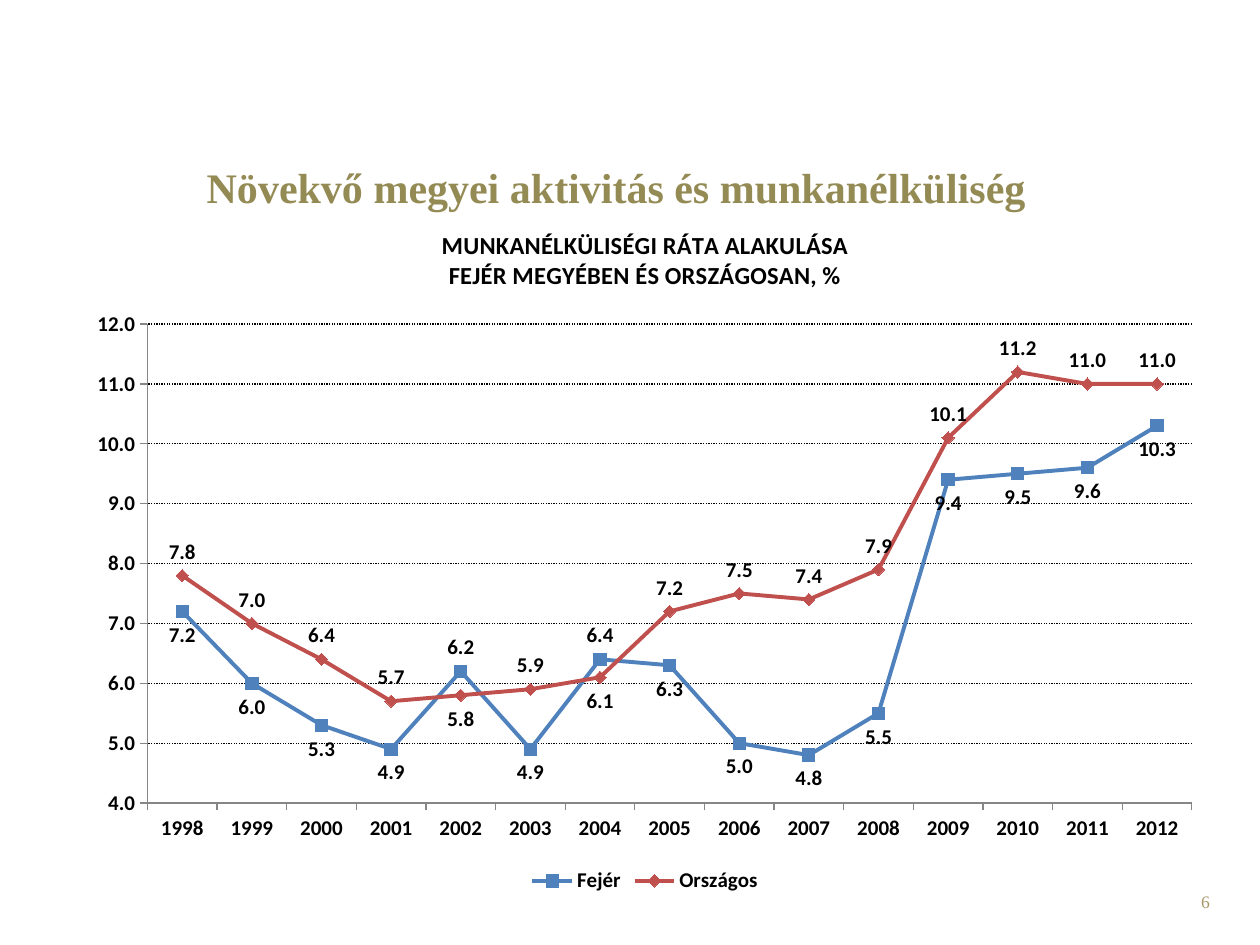
from dataclasses import dataclass
from lxml import etree
from pptx import Presentation
from pptx.chart.data import CategoryChartData
from pptx.dml.color import RGBColor
from pptx.enum import chart as ch, dml, text
from pptx.oxml import ns
from pptx.util import Pt


@dataclass(frozen=True)
class Theme:
    """Colours, fonts and type sizes."""
    olive: str = "948A54"
    tan: str = "A69765"
    ink: str = "000000"
    axis: str = "868686"
    blue: str = "4F81BD"
    red: str = "C0504D"
    serif: str = "Times New Roman"
    sans: str = "Calibri"
    head: int = 24
    title: int = 14
    body: int = 12
    foot: int = 10


T = Theme()
YEARS = [str(y) for y in range(1998, 2013)]
POS, MARK = ch.XL_LABEL_POSITION, ch.XL_MARKER_STYLE
FEJER = (7.2, 6.0, 5.3, 4.9, 6.2, 4.9, 6.4, 6.3, 5.0, 4.8, 5.5, 9.4, 9.5, 9.6, 10.3)
ORSZ = (7.8, 7.0, 6.4, 5.7, 5.8, 5.9, 6.1, 7.2, 7.5, 7.4, 7.9, 10.1, 11.2, 11.0, 11.0)
RATES = (
    ("Fejér", FEJER, T.blue, MARK.SQUARE, POS.BELOW, POS.ABOVE),
    ("Országos", ORSZ, T.red, MARK.DIAMOND, POS.ABOVE, POS.BELOW),
)
SWAPPED = (4, 6)


def put(obj, **fmt):
    """Set each format value on an object."""
    for key, val in fmt.items():
        setattr(obj, key, val)


def style(font, name, size, color, bold=False):
    """Format a font."""
    put(font, name=name, size=Pt(size), bold=bold)
    font.color.rgb = RGBColor.from_string(color)


def stroke(line, color, width, **fmt):
    """Format a line."""
    put(line, width=Pt(width), **fmt)
    line.color.rgb = RGBColor.from_string(color)


def place(shape, box):
    """Move a shape to a box."""
    put(shape, **dict(zip(("left", "top", "width", "height"), map(Pt, box))))


def heading(slide, box):
    """Fill the title placeholder."""
    shape = slide.shapes.title
    place(shape, box)
    frame = shape.text_frame
    frame.text = "Növekvő megyei aktivitás és munkanélküliség"
    put(frame, word_wrap=False, vertical_anchor=text.MSO_ANCHOR.TOP,
        auto_size=text.MSO_AUTO_SIZE.NONE)
    para = frame.paragraphs[0]
    para.alignment = text.PP_ALIGN.LEFT
    style(para.runs[0].font, T.serif, T.head, T.olive, True)


def number(slide, box):
    """Add the page number."""
    frame = slide.shapes.add_textbox(*map(Pt, box)).text_frame
    put(frame, word_wrap=True, text="6")
    para = frame.paragraphs[0]
    para.alignment = text.PP_ALIGN.RIGHT
    style(para.runs[0].font, T.serif, T.foot, T.tan)


def layout(chart, **frac):
    """Fix the inner plot area as fractions of the chart."""
    plot = chart._chartSpace.find(".//" + ns.qn("c:plotArea"))
    for old in plot.findall(ns.qn("c:layout")):
        plot.remove(old)
    root = etree.Element(ns.qn("c:layout"))
    man = etree.SubElement(root, ns.qn("c:manualLayout"))
    vals = dict(layoutTarget="inner", xMode="edge", yMode="edge", **frac)
    for key, val in vals.items():
        etree.SubElement(man, ns.qn("c:" + key)).set("val", str(val))
    plot.insert(0, root)


def axes(chart):
    """Format both axes and the grid."""
    for axis in (chart.category_axis, chart.value_axis):
        put(axis, major_tick_mark=ch.XL_TICK_MARK.OUTSIDE,
            minor_tick_mark=ch.XL_TICK_MARK.NONE)
        stroke(axis.format.line, T.axis, 0.75)
        style(axis.tick_labels.font, T.sans, T.body, T.ink, True)
    axis = chart.value_axis
    put(axis, minimum_scale=4, maximum_scale=12, major_unit=1,
        has_major_gridlines=True)
    put(axis.tick_labels, number_format="#,##0.0", number_format_is_linked=False)
    stroke(axis.major_gridlines.format.line, T.ink, 0.75,
           dash_style=dml.MSO_LINE.ROUND_DOT)


def curve(line, color, mark, side, other):
    """Format one series and its labels."""
    line.smooth = False
    stroke(line.format.line, color, 2.25)
    put(line.marker, style=mark, size=7)
    line.marker.format.fill.solid()
    line.marker.format.fill.fore_color.rgb = RGBColor.from_string(color)
    stroke(line.marker.format.line, color, 0.75)
    tags = line.data_labels
    put(tags, show_value=True, position=side, number_format="0.0",
        number_format_is_linked=False)
    style(tags.font, T.sans, T.body, T.ink, True)
    for i in SWAPPED:
        tag = line.points[i].data_label
        style(tag.font, T.sans, T.body, T.ink, True)
        tag.position = other


def rates(slide, box):
    """Add the line chart of unemployment rates."""
    data = CategoryChartData(number_format="0.0")
    data.categories = YEARS
    for name, vals, *_ in RATES:
        data.add_series(name, vals)
    kind = ch.XL_CHART_TYPE.LINE_MARKERS
    chart = slide.shapes.add_chart(kind, *map(Pt, box), data).chart
    style(chart.font, T.sans, T.body, T.ink, True)
    put(chart, has_title=True, has_legend=True)
    chart.plots[0].vary_by_categories = False
    frame = chart.chart_title.text_frame
    frame.text = "MUNKANÉLKÜLISÉGI RÁTA ALAKULÁSA\nFEJÉR MEGYÉBEN ÉS ORSZÁGOSAN, %"
    for para in frame.paragraphs:
        style(para.runs[0].font, T.sans, T.title, T.ink, True)
    chart.chart_title.include_in_layout = False
    put(chart.legend, position=ch.XL_LEGEND_POSITION.BOTTOM, include_in_layout=False)
    style(chart.legend.font, T.sans, T.body, T.ink, True)
    layout(chart, x=0.064, y=0.173, w=0.915, h=0.69)
    axes(chart)
    for line, (_, _, *look) in zip(chart.plots[0].series, RATES):
        curve(line, *look)


def main():
    """Build and save the slide."""
    deck = Presentation()
    put(deck, slide_width=Pt(720), slide_height=Pt(540))
    slide = deck.slides.add_slide(deck.slide_layouts[5])
    number(slide, (530.6, 505.4, 167.8, 28.8))
    heading(slide, (110.9, 88.6, 504, 36))
    rates(slide, (42.5, 116.6, 652.3, 396.7))
    deck.save("out.pptx")


if __name__ == "__main__":
    main()
